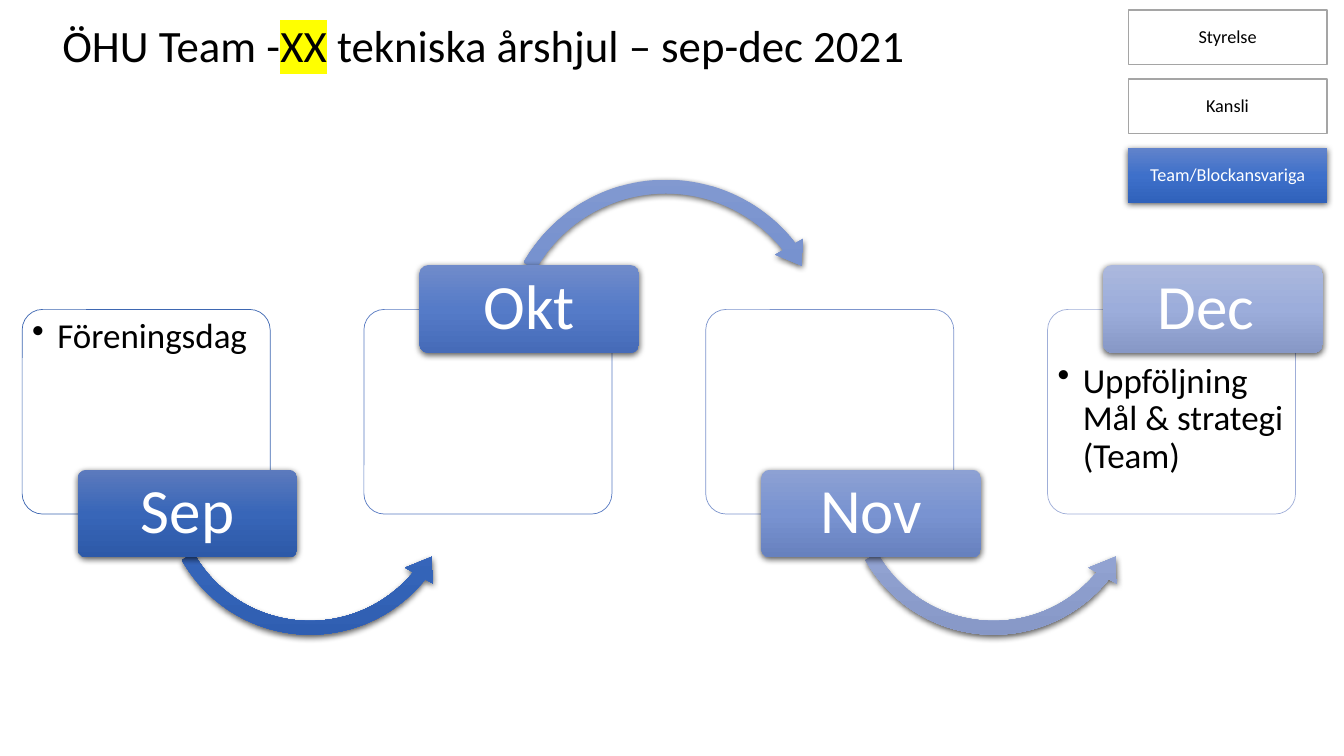
from pptx import Presentation
from pptx.dml.color import RGBColor
from pptx.enum.shapes import MSO_SHAPE
from pptx.enum.text import MSO_ANCHOR, PP_ALIGN
from pptx.oxml import parse_xml
from pptx.oxml.ns import nsdecls, qn
from pptx.util import Inches, Pt


def color(hex_string):
    return RGBColor.from_string(hex_string)


def add_glossy_shape(kind, left, top, width, height, stops):
    """Add a borderless shape with a vertical gradient and a soft shadow."""
    shape = slide.shapes.add_shape(kind, Inches(left), Inches(top), Inches(width), Inches(height))
    shape.fill.solid()
    stop_xml = "".join(
        f'<a:gs pos="{position}"><a:srgbClr val="{stop}"/></a:gs>'
        for position, stop in zip((0, 50000, 100000), stops))
    properties = shape._element.spPr
    properties.replace(properties.find(qn("a:solidFill")), parse_xml(
        f'<a:gradFill {nsdecls("a")} rotWithShape="1"><a:gsLst>{stop_xml}</a:gsLst>'
        '<a:lin ang="5400000" scaled="0"/></a:gradFill>'))
    shape.line.fill.background()
    shape.shadow.inherit = False
    properties.find(qn("a:effectLst")).append(parse_xml(
        f'<a:outerShdw {nsdecls("a")} blurRad="57150" dist="19050" dir="5400000" algn="ctr" '
        'rotWithShape="0"><a:srgbClr val="000000"><a:alpha val="63000"/></a:srgbClr></a:outerShdw>'))
    return shape


presentation = Presentation()
presentation.slide_width = Inches(13.33)
presentation.slide_height = Inches(7.5)
slide = presentation.slides.add_slide(presentation.slide_layouts[6])

# Months: name, note, panel line, label gradient, arrow gradient
months = [
    ("Sep", "Föreningsdag", "3E67B2", ("5C7ABD", "3866B8", "2D59A8"), ("5E7EC4", "3B6BC1", "2F5EB1")),
    ("Okt", "", "5A7CC3", ("708BCA", "557BC8", "466BB8"), ("8299D0", "6B8ACE", "5A79BC")),
    ("Nov", "", "7D95CD", ("8DA1D3", "7993D1", "6781BE"), ("AAB7DD", "9BACDB", "8697C6")),
    ("Dec ", "Uppföljning Mål & strategi (Team)", "9FAED8", ("ABB8DD", "9CADDB", "8798C6"), None),
]
first_left, month_step = 0.22, 3.39
lower_arrow = (MSO_SHAPE.LEFT_CIRCULAR_ARROW, 1.3, 3.28, 3.11, (0.044, 5.646, 23.401, 90.245, 0.052))
upper_arrow = (MSO_SHAPE.CIRCULAR_ARROW, 1.28, 1.69, 3.43, (0.04, 5.079, 193.166, 125.755, 0.047))

for index, (name, note, line_color, label_stops, arrow_stops) in enumerate(months):
    left = first_left + index * month_step
    label_on_top = index % 2 == 1

    # Panel with the month's activities
    panel = slide.shapes.add_shape(
        MSO_SHAPE.ROUNDED_RECTANGLE, Inches(left), Inches(3.07), Inches(2.46), Inches(2.03))
    panel.adjustments[0] = 0.1
    panel.fill.solid()
    panel.fill.fore_color.rgb = color("FFFFFF")
    panel._element.spPr.find(qn("a:solidFill"))[0].append(
        parse_xml(f'<a:alpha {nsdecls("a")} val="90000"/>'))
    panel.line.color.rgb = color(line_color)
    panel.line.width = Pt(0.5)
    panel.shadow.inherit = False
    if note:
        frame = panel.text_frame
        frame.word_wrap = True
        frame.vertical_anchor = MSO_ANCHOR.TOP
        frame.margin_left = frame.margin_right = Inches(0.04)
        frame.margin_top = Inches(0.47 if label_on_top else 0.03)
        frame.text = note
        paragraph = frame.paragraphs[0]
        paragraph.alignment = PP_ALIGN.LEFT
        paragraph.line_spacing = 0.9
        bullet_properties = paragraph._p.get_or_add_pPr()
        bullet_properties.set("marL", str(Inches(0.25)))
        bullet_properties.set("indent", str(Inches(-0.25)))
        bullet_properties.append(parse_xml(f'<a:buChar {nsdecls("a")} char="•"/>'))
        paragraph.font.size = Pt(25)
        paragraph.font.name = "Calibri"
        paragraph.font.color.rgb = color("000000")
        font = paragraph.runs[0].font
        font.size, font.name = Pt(25), "Calibri"
        font.color.rgb = color("000000")

    # Arrow to the next month
    if arrow_stops:
        kind, offset, top, size, adjustments = upper_arrow if label_on_top else lower_arrow
        arrow = add_glossy_shape(kind, left + offset, top, size, size, arrow_stops)
        for number, value in enumerate(adjustments):
            arrow.adjustments[number] = value

    # Month label
    label = add_glossy_shape(MSO_SHAPE.ROUNDED_RECTANGLE, left + 0.55,
                             2.63 if label_on_top else 4.66, 2.18, 0.87, label_stops)
    label.adjustments[0] = 0.1
    frame = label.text_frame
    frame.margin_left = frame.margin_right = Inches(0.09)
    frame.margin_top = frame.margin_bottom = Inches(0.06)
    frame.vertical_anchor = MSO_ANCHOR.MIDDLE
    frame.text = name
    paragraph = frame.paragraphs[0]
    paragraph.alignment = PP_ALIGN.CENTER
    paragraph.line_spacing = 0.9
    font = paragraph.runs[0].font
    font.size, font.name = Pt(45), "Calibri"
    font.color.rgb = color("FFFFFF")

# Legend of responsible groups
for index, group in enumerate(("Styrelse", "Kansli", "Team/Blockansvariga")):
    place = (11.19, 0.1 + index * 0.685, 1.97, 0.54)
    highlighted = index == 2
    if highlighted:
        box = add_glossy_shape(MSO_SHAPE.RECTANGLE, *place, ("6183CB", "3E70CA", "3062BB"))
    else:
        box = slide.shapes.add_shape(MSO_SHAPE.RECTANGLE, *map(Inches, place))
        box.fill.solid()
        box.fill.fore_color.rgb = color("FFFFFF")
        box.line.color.rgb = color("A5A5A5")
        box.line.width = Pt(1)
        box.shadow.inherit = False
    frame = box.text_frame
    frame.word_wrap = True
    frame.margin_top = frame.margin_bottom = Inches(0.02)
    frame.vertical_anchor = MSO_ANCHOR.MIDDLE
    frame.text = group
    paragraph = frame.paragraphs[0]
    paragraph.alignment = PP_ALIGN.CENTER
    paragraph.line_spacing = 0.9
    font = paragraph.runs[0].font
    font.size, font.name = Pt(13), "Calibri"
    font.color.rgb = color("FFFFFF" if highlighted else "000000")

# Title with the team number highlighted
title = slide.shapes.add_textbox(Inches(0.52), Inches(0.1), Inches(10.5), Inches(0.75))
title.text_frame.word_wrap = True
title.text_frame.vertical_anchor = MSO_ANCHOR.MIDDLE
paragraph = title.text_frame.paragraphs[0]
paragraph.line_spacing = 0.9
for text in ("ÖHU Team -", "XX", " tekniska årshjul – sep-dec 2021"):
    run = paragraph.add_run()
    run.text = text
    run.font.size, run.font.name = Pt(32), "Calibri"
    run.font.color.rgb = color("000000")
    if text == "XX":
        run._r.rPr.find(qn("a:solidFill")).addnext(parse_xml(
            f'<a:highlight {nsdecls("a")}><a:srgbClr val="FFFF00"/></a:highlight>'))

presentation.save("out.pptx")
